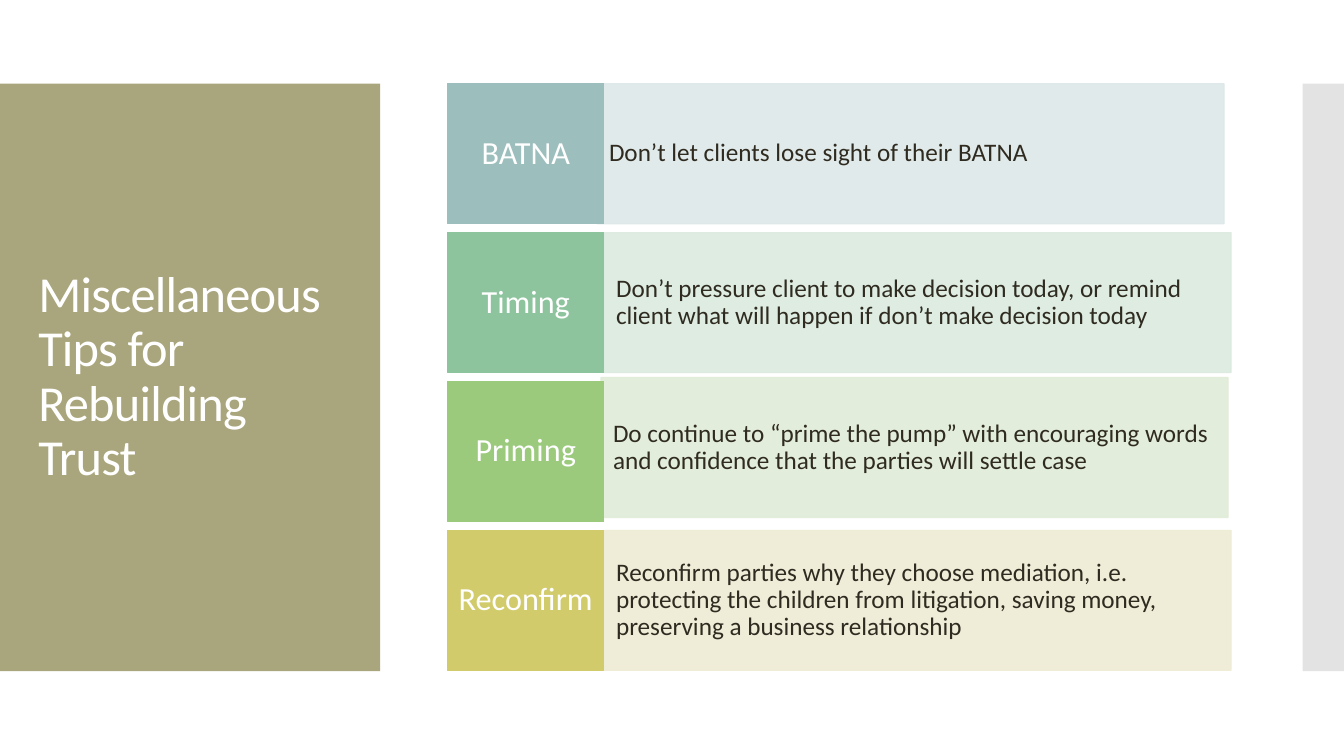
from lxml import etree
from pptx import Presentation
from pptx.dml.color import RGBColor
from pptx.enum.shapes import MSO_SHAPE
from pptx.enum.text import MSO_ANCHOR, MSO_AUTO_SIZE, PP_ALIGN
from pptx.oxml.ns import qn
from pptx.util import Inches, Pt

RECT = MSO_SHAPE.RECTANGLE
MIDDLE = MSO_ANCHOR.MIDDLE
NO_FIT = MSO_AUTO_SIZE.NONE
LEFT, CENTER = PP_ALIGN.LEFT, PP_ALIGN.CENTER
TITLE_ONLY = 5
FONT = "Calibri"

COLORS = {
    "panel": "A9A57C", "edge": "C8C8C8", "white": "FFFFFF", "text": "2F2B20",
    "teal": "9CBEBD", "teal_light": "DEE8E8",
    "mint": "8DC49D", "mint_light": "DBEADF",
    "green": "9BCA7D", "green_light": "E0ECD8",
    "gold": "D2CB6C", "gold_light": "EEECD4",
}

# Label, advice, colour, horizontal and vertical shift of the advice box
TIPS = [
    ("BATNA", "Don’t let clients lose sight of their BATNA", "teal", -0.07, 0),
    ("Timing", "Don’t pressure client to make decision today, or remind client "
     "what will happen if don’t make decision today", "mint", 0, 0),
    ("Priming", "Do continue to “prime the pump” with encouraging words and "
     "confidence that the parties will settle case", "green", -0.03, -0.04),
    ("Reconfirm", "Reconfirm parties why they choose mediation, i.e. protecting "
     "the children from litigation, saving money, preserving a business "
     "relationship", "gold", 0, 0),
]
TOP, PITCH, ROW_H = 0.83, 1.477, 1.39
LABEL_X, LABEL_W, ADVICE_W = 4.44, 1.55, 6.22


def rgb(name):
    return RGBColor.from_string(COLORS[name])


def add_box(slide, x, y, w, h, color, opacity=100, outlined=True):
    sp = slide.shapes.add_shape(RECT, Inches(x), Inches(y), Inches(w), Inches(h))
    sp.shadow.inherit = False
    sp.fill.solid()
    sp.fill.fore_color.rgb = rgb(color)
    if outlined:
        sp.line.color.rgb = rgb(color)
        sp.line.width = Pt(0.75)
    else:
        sp.line.fill.background()
    if opacity < 100:
        for clr in sp.element.spPr.iter(qn("a:srgbClr")):
            etree.SubElement(clr, qn("a:alpha"), val=str(opacity * 1000))
    return sp


def write_text(sp, text, size, color, align, inset_x, inset_y):
    tf = sp.text_frame
    tf.word_wrap = True
    tf.auto_size = NO_FIT
    tf.vertical_anchor = MIDDLE
    tf.margin_left = tf.margin_right = Inches(inset_x)
    tf.margin_top = tf.margin_bottom = Inches(inset_y)
    p = tf.paragraphs[0]
    p.alignment = align
    p.line_spacing = 0.9
    r = p.add_run()
    r.text = text
    r.font.name = FONT
    r.font.size = Pt(size)
    r.font.color.rgb = rgb(color)
    return r


def add_title(slide, text):
    title = slide.shapes.title
    title.left, title.top = Inches(0.28), Inches(1.23)
    title.width, title.height = Inches(3.22), Inches(5.03)
    r = write_text(title, text, 36, "white", LEFT, 0.1, 0.05)
    r.font._element.set("spc", "-60")
    return title


def add_tip(slide, row, label, advice, color, dx, dy):
    y = TOP + row * PITCH
    sp = add_box(slide, LABEL_X + LABEL_W + dx, y + dy, ADVICE_W, ROW_H,
                 color + "_light", opacity=90)
    write_text(sp, advice, 18, "text", LEFT, 0.12, 0.35)
    sp = add_box(slide, LABEL_X, y, LABEL_W, ROW_H, color)
    write_text(sp, label, 23, "white", CENTER, 0.08, 0.14)


def main():
    prs = Presentation()
    prs.slide_width, prs.slide_height = Inches(13.33), Inches(7.5)
    slide = prs.slides.add_slide(prs.slide_layouts[TITLE_ONLY])

    # Side panels, placed behind the title
    title = add_title(slide, "Miscellaneous Tips for Rebuilding Trust")
    panel = add_box(slide, 0, TOP, 3.77, 5.83, "panel", outlined=False)
    edge = add_box(slide, 12.92, TOP, 0.41, 5.83, "edge", 50, outlined=False)
    for sp in (panel, edge):
        title.element.addprevious(sp.element)

    # Tip rows
    for row, tip in enumerate(TIPS):
        add_tip(slide, row, *tip)

    prs.save("out.pptx")


if __name__ == "__main__":
    main()
